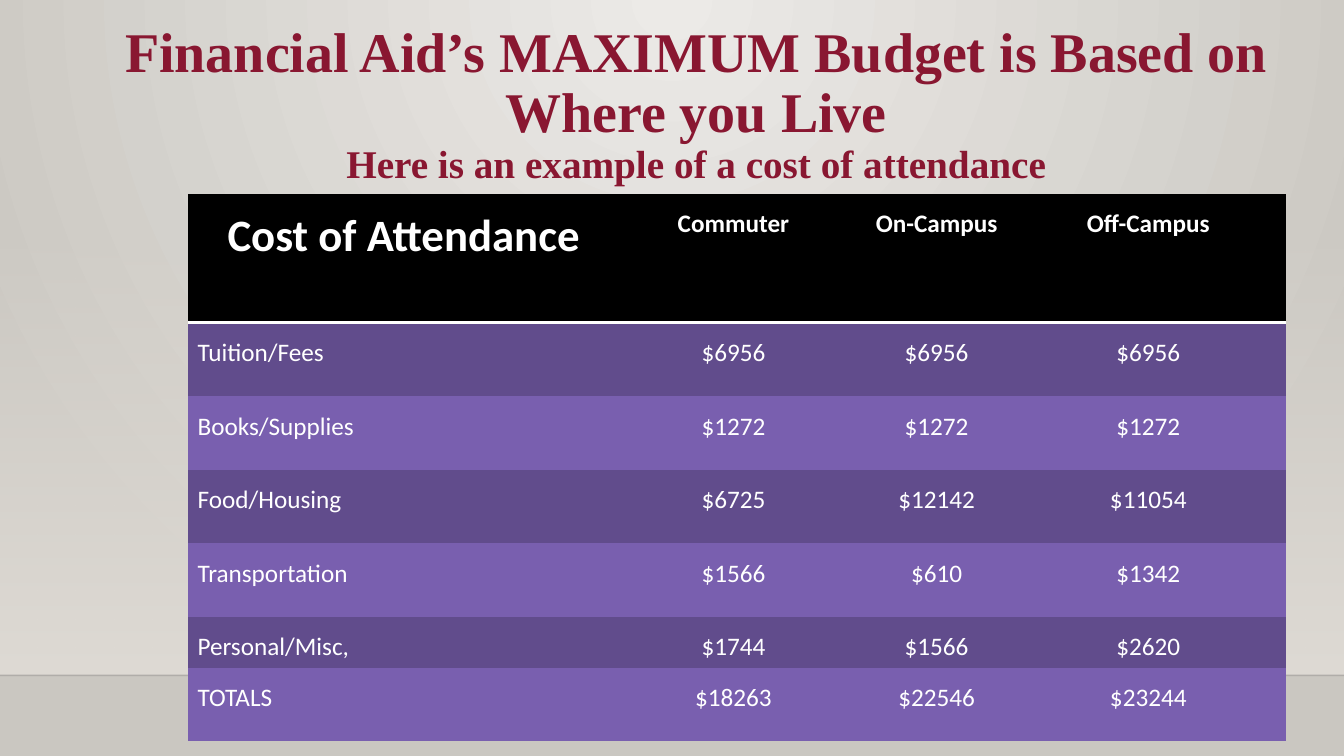
from dataclasses import dataclass

from lxml import etree
from pptx import Presentation
from pptx import util as u
from pptx.dml.color import RGBColor
from pptx.enum import shapes, text
from pptx.oxml.ns import qn

WHITE = "FFFFFF"
MAROON = "891731"
HEADER_FILL = "000000"
BAND_FILLS = ("614C8C", "795FAF")
TABLE_FONT = "Calibri"
NO_STYLE = "{2D5ABB26-0587-4C30-8999-92F81FD0307C}"
COLUMN_WIDTHS = (4.39, 2.05, 1.98, 2.22, 0.26)


@dataclass(frozen=True)
class BudgetRow:
    label: str
    amounts: tuple[str, ...]
    height: float = 0.73


BUDGET = (
    BudgetRow("Cost of Attendance ", ("Commuter", "On-Campus", "Off-Campus"), 1.28),
    BudgetRow("Tuition/Fees", ("$6956", "$6956", "$6956")),
    BudgetRow("Books/Supplies", ("$1272", "$1272", "$1272")),
    BudgetRow("Food/Housing", ("$6725", "$12142", "$11054")),
    BudgetRow("Transportation", ("$1566", "$610", "$1342")),
    BudgetRow("Personal/Misc,", ("$1744", "$1566", "$2620"), 0.5),
    BudgetRow("TOTALS", ("$18263", "$22546", "$23244")),
)


def color(value: str) -> RGBColor:
    return RGBColor.from_string(value)


def write_text(paragraph, content: str, *, size: float, font: str, fill: str,
               bold: bool = False, centered: bool = True) -> None:
    paragraph.alignment = text.PP_ALIGN.CENTER if centered else text.PP_ALIGN.LEFT
    run = paragraph.add_run()
    run.text = content
    run.font.size = u.Pt(size)
    run.font.name = font
    run.font.bold = bold
    run.font.color.rgb = color(fill)


def set_gradient(fill, start: str, end: str) -> None:
    fill.gradient()
    for stop, position, value in zip(fill.gradient_stops, (0, 1), (start, end)):
        stop.position = position
        stop.color.rgb = color(value)


def set_opacity(element, percent: int) -> None:
    first_color = element.find(".//" + qn("a:srgbClr"))
    etree.SubElement(first_color, qn("a:alpha"), val=str(percent * 1000))


def draw_backdrop(slide) -> None:
    set_gradient(slide.background.fill, "ECEAE7", "CAC7C1")
    linear = slide.background._cSld.find(".//" + qn("a:lin"))
    circle = etree.Element(qn("a:path"), path="circle")
    etree.SubElement(circle, qn("a:fillToRect"), l="43000", t="0", r="43000", b="100000")
    linear.getparent().replace(linear, circle)

    wall = slide.shapes.add_shape(shapes.MSO_SHAPE.RECTANGLE, 0, u.Inches(2.21),
                                  u.Inches(13.33), u.Inches(4.49))
    wall.shadow.inherit = False
    wall.line.fill.background()
    set_gradient(wall.fill, "DFDBD5", "DFDBD5")
    wall.fill.gradient_angle = 270
    set_opacity(wall._element.spPr, 0)

    floor_line = slide.shapes.add_connector(shapes.MSO_CONNECTOR.STRAIGHT, 0, u.Inches(6.7),
                                            u.Inches(13.33), u.Inches(6.7))
    floor_line.line.width = u.Pt(1)
    floor_line.line.color.rgb = color("000001")
    set_opacity(floor_line._element.spPr, 20)
    etree.SubElement(floor_line._element.spPr, qn("a:effectLst"))


def draw_title(slide) -> None:
    title = slide.shapes.title
    slide.shapes._spTree.append(title._element)
    title.left, title.top = u.Inches(1.06), u.Inches(0.17)
    title.width, title.height = u.Inches(11.69), u.Inches(1.75)
    frame = title.text_frame
    frame.word_wrap = True
    frame.auto_size = text.MSO_AUTO_SIZE.NONE
    frame.vertical_anchor = text.MSO_ANCHOR.MIDDLE
    paragraph = frame.paragraphs[0]
    paragraph.line_spacing = 0.9
    style = dict(font="Times New Roman", fill=MAROON, bold=True)
    write_text(paragraph, "Financial Aid’s MAXIMUM Budget is Based on Where you Live",
               size=40, **style)
    paragraph.add_line_break()
    etree.SubElement(paragraph._p[-1], qn("a:rPr"), sz="4000")
    write_text(paragraph, "Here is an example of a cost of attendance", size=28, **style)


def add_bottom_border(cell, value: str, width: float) -> None:
    border = etree.Element(qn("a:lnB"), w=str(u.Pt(width)))
    solid = etree.SubElement(border, qn("a:solidFill"))
    etree.SubElement(solid, qn("a:srgbClr"), val=value)
    cell._tc.get_or_add_tcPr().insert(0, border)


def draw_budget_table(slide) -> None:
    frame = slide.shapes.add_table(len(BUDGET), len(COLUMN_WIDTHS), u.Inches(1.86),
                                   u.Inches(1.92), u.Inches(10.89), u.Inches(5.42))
    table = frame.table
    table.first_row = table.horz_banding = False
    table._tbl.tblPr.find(qn("a:tableStyleId")).text = NO_STYLE
    for column, width in zip(table.columns, COLUMN_WIDTHS):
        column.width = u.Inches(width)

    for row_index, budget_row in enumerate(BUDGET):
        is_header = row_index == 0
        row = table.rows[row_index]
        row.height = u.Inches(budget_row.height)
        for cell in row.cells:
            cell.fill.solid()
            cell.fill.fore_color.rgb = color(
                HEADER_FILL if is_header else BAND_FILLS[(row_index - 1) % 2])
            if is_header:
                add_bottom_border(cell, WHITE, 2)
        for column_index, content in enumerate((budget_row.label, *budget_row.amounts)):
            cell = row.cells[column_index]
            cell.margin_left = cell.margin_right = u.Inches(0.1)
            cell.margin_top, cell.margin_bottom = u.Inches(0.15), u.Inches(0.05)
            is_label = column_index == 0
            write_text(cell.text_frame.paragraphs[0], content,
                       size=32 if is_header and is_label else 18,
                       font=TABLE_FONT, fill=WHITE, bold=is_header,
                       centered=is_header or not is_label)


def main() -> None:
    presentation = Presentation()
    presentation.slide_width = u.Inches(13.33)
    presentation.slide_height = u.Inches(7.5)
    slide = presentation.slides.add_slide(presentation.slide_layouts[5])
    draw_backdrop(slide)
    draw_title(slide)
    draw_budget_table(slide)
    presentation.save("out.pptx")


if __name__ == "__main__":
    main()
